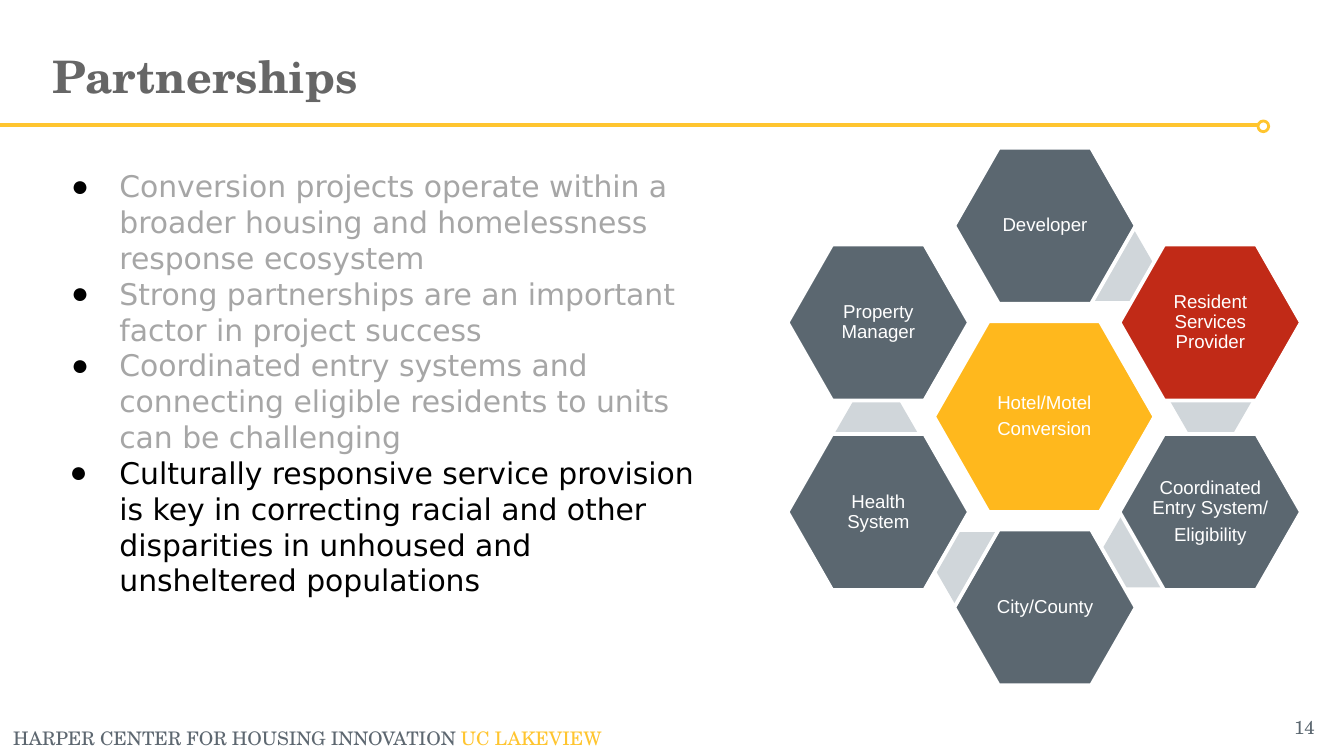
from dataclasses import dataclass

import pptx
import pptx.dml.color
import pptx.enum.shapes
import pptx.enum.text
import pptx.oxml.ns
import pptx.util
from lxml import etree

SCALE = 9144  # EMU per px, at 100 px to the inch
HUES = {
    "gold": "FFC52F", "amber": "FFB81D", "slate": "5B6770", "red": "C12A17",
    "mist": "D0D6DA", "white": "FFFFFF", "black": "000000",
    "faded": "A6A6A6", "title": "666666", "footer": "5D6770",
}
SERIF, SANS, LABEL = "TeX Gyre Schola", "DejaVu Sans", "Arial"
KIND = pptx.enum.shapes.MSO_SHAPE
ALIGN = pptx.enum.text.PP_ALIGN
ANCHOR = pptx.enum.text.MSO_ANCHOR


@dataclass
class Box:
    left: int
    top: int
    width: int
    height: int

    def emu(self) -> list[int]:
        return [px(n) for n in (self.left, self.top, self.width, self.height)]


@dataclass
class Cell:
    box: Box
    lines: list[str]
    hue: str = "slate"
    bridge: tuple[int, int] | None = None


def px(count: int) -> int:
    return count * SCALE


def color(hue: str) -> pptx.dml.color.RGBColor:
    return pptx.dml.color.RGBColor.from_string(HUES[hue])


def style(font, name: str, size: int, hue: str, bold: bool = False) -> None:
    font.name, font.size, font.bold = name, pptx.util.Pt(size), bold
    font.color.rgb = color(hue)


def add_text(slide, box: Box, pad: tuple[int, int], anchor=ANCHOR.TOP):
    """Add a wrapping text box; pad is the side and the top/bottom inset."""
    frame = slide.shapes.add_textbox(*box.emu()).text_frame
    frame.word_wrap = True
    frame.vertical_anchor = anchor
    frame.margin_left = frame.margin_right = px(pad[0])
    frame.margin_top = frame.margin_bottom = px(pad[1])
    return frame


def fill_lines(frame, lines: list[str]):
    frame.text = "\n".join(lines)
    return frame.paragraphs


def add_bullet(par, indent: int) -> None:
    props = par._p.get_or_add_pPr()
    props.set("marL", str(px(50)))
    props.set("indent", str(px(-indent)))
    tint = etree.SubElement(props, pptx.oxml.ns.qn("a:buClr"))
    etree.SubElement(tint, pptx.oxml.ns.qn("a:srgbClr"), val=HUES["black"])
    etree.SubElement(props, pptx.oxml.ns.qn("a:buFont"), typeface=LABEL)
    etree.SubElement(props, pptx.oxml.ns.qn("a:buChar"), char="●")


def add_hex(slide, box: Box, hue: str, adj: float, edged: bool) -> None:
    shape = slide.shapes.add_shape(KIND.HEXAGON, *box.emu())
    shape.shadow.inherit = False
    shape.adjustments[0] = adj
    shape.adjustments[1] = 1.155
    shape.fill.solid()
    shape.fill.fore_color.rgb = color(hue)
    if edged:
        shape.line.color.rgb = color("white")
        shape.line.width = pptx.util.Pt(2)
    else:
        shape.line.fill.background()


def add_cell(slide, cell: Cell) -> None:
    """Draw the bridge behind the cell, the cell, and its centred label."""
    if cell.bridge:
        add_hex(slide, Box(*cell.bridge, 62, 53), "mist", 0.289, False)
    box = cell.box
    add_hex(slide, box, cell.hue, 0.286, True)
    dx, dy = box.width // 6, box.height // 6
    inner = Box(box.left + dx, box.top + dy,
                box.width - 2 * dx, box.height - 2 * dy)
    frame = add_text(slide, inner, (1, 1), ANCHOR.MIDDLE)
    for par in fill_lines(frame, cell.lines):
        par.alignment = ALIGN.CENTER
        par.line_spacing = 0.9
        par.space_after = pptx.util.Pt(3.5)
        style(par.font, LABEL, 10, "white")


def add_rule(slide) -> None:
    line = slide.shapes.add_connector(
        pptx.enum.shapes.MSO_CONNECTOR.STRAIGHT, px(-1), px(93), px(937), px(93))
    line.line.color.rgb = color("gold")
    line.line.width = pptx.util.Pt(2)
    etree.SubElement(line._element.spPr, pptx.oxml.ns.qn("a:effectLst"))
    ring = slide.shapes.add_shape(KIND.OVAL, *Box(936, 90, 8, 8).emu())
    ring.shadow.inherit = False
    ring.fill.background()
    ring.line.color.rgb = color("gold")
    ring.line.width = pptx.util.Pt(1.5)


def add_frame(slide) -> None:
    """Add the page number, rule, footer and title."""
    page = add_text(slide, Box(789, 526, 199, 30), (10, 5), ANCHOR.MIDDLE)
    par = fill_lines(page, ["14"])[0]
    par.alignment = ALIGN.RIGHT
    style(par.font, SERIF, 10, "slate")

    add_rule(slide)

    par = add_text(slide, Box(0, 536, 608, 20), (10, 5)).paragraphs[0]
    for text, hue in (("HARPER CENTER FOR HOUSING INNOVATION ", "footer"),
                      ("UC LAKEVIEW", "gold")):
        run = par.add_run()
        run.text = text
        style(run.font, SERIF, 10, hue)

    title = add_text(slide, Box(29, 7, 990, 98), (10, 10), ANCHOR.MIDDLE)
    style(fill_lines(title, ["Partnerships"])[0].font, SERIF, 24, "title", True)


POINTS = [
    "Conversion projects operate within a broader housing and homelessness "
    "response ecosystem",
    "Strong partnerships are an important factor in project success",
    "Coordinated entry systems and connecting eligible residents to units "
    "can be challenging",
    "Culturally responsive service provision is key in correcting racial and "
    "other disparities in unhoused and unsheltered populations",
]
WEST, MID, EAST = 586, 710, 833
HIGH, LOW = 182, 323


def spot(left: int, top: int) -> Box:
    return Box(left, top, 135, 116)


CELLS = [
    Cell(Box(695, 239, 164, 142), ["Hotel/Motel", "Conversion"], "amber"),
    Cell(spot(MID, 110), ["Developer"], bridge=(797, 171)),
    Cell(spot(EAST, HIGH), ["Resident Services Provider"], "red", (870, 271)),
    Cell(spot(EAST, LOW), ["Coordinated Entry System/", "Eligibility"],
         bridge=(819, 384)),
    Cell(spot(MID, 394), ["City/County"], bridge=(695, 396)),
    Cell(spot(WEST, LOW), ["Health System"], bridge=(621, 296)),
    Cell(spot(WEST, HIGH), ["Property Manager"]),
]


def main() -> None:
    deck = pptx.Presentation()
    deck.slide_width = px(1000)
    deck.slide_height = px(1000) * 9 // 16
    slide = deck.slides.add_slide(deck.slide_layouts[6])
    add_frame(slide)

    body = add_text(slide, Box(29, 115, 502, 369), (10, 10))
    for par in fill_lines(body, POINTS):
        last = par.text == POINTS[-1]
        add_bullet(par, 37 if last else 36)
        style(par.font, SANS, 16, "black" if last else "faded")

    for cell in CELLS:
        add_cell(slide, cell)
    deck.save("out.pptx")


if __name__ == "__main__":
    main()
